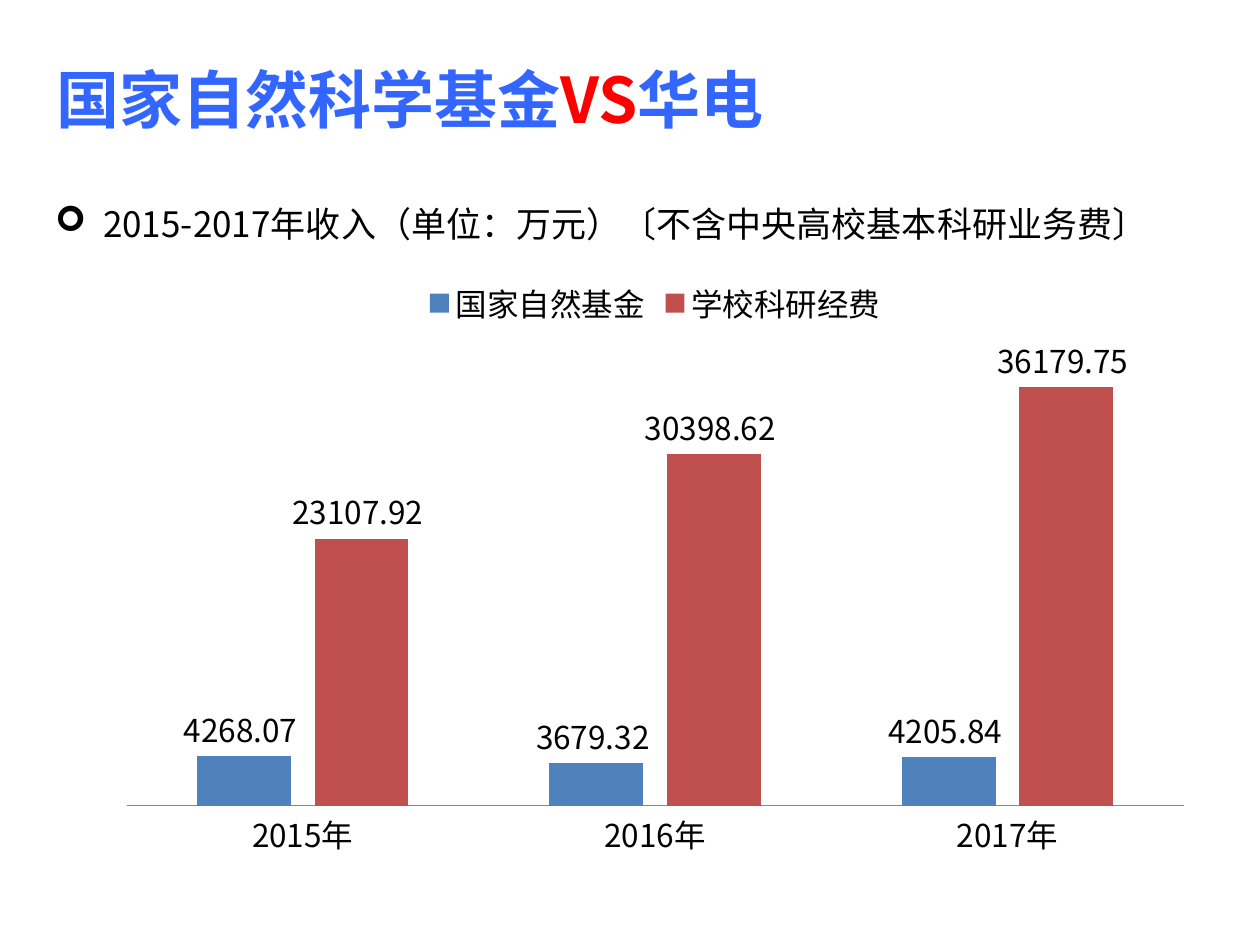
from lxml import etree
from pptx import Presentation
from pptx.chart.data import CategoryChartData
from pptx.dml.color import RGBColor
from pptx.enum.chart import XL_CHART_TYPE as ChartType, XL_LABEL_POSITION as LabelPos
from pptx.enum.chart import XL_LEGEND_POSITION as LegendPos, XL_TICK_MARK as TickMark
from pptx.oxml.ns import qn
from pptx.util import Inches, Pt

FONT = "Noto Sans CJK SC"
NUMBER_FORMAT = "0.00_ "
COLORS = {
    "title": "3366FF",
    "accent": "FF0000",
    "text": "000000",
    "axis": "868686",
    "fund": "4F81BD",
    "school": "C0504D",
}
YEARS = ["2015年", "2016年", "2017年"]
INCOME = [
    ("国家自然基金", "fund", [4268.07, 3679.32, 4205.84]),
    ("学校科研经费", "school", [23107.92, 30398.62, 36179.75]),
]


def rgb(name):
    return RGBColor.from_string(COLORS[name])


def style_font(font, size, color="text", bold=False):
    """Set the format and use the same typeface for Latin and Chinese letters."""
    font.size, font.bold, font.name = Pt(size), bold, FONT
    font.color.rgb = rgb(color)
    latin = font._element.find(qn("a:latin"))
    east_asian = etree.Element(qn("a:ea"), typeface=FONT)
    latin.addnext(east_asian)


def add_run(paragraph, text, **style):
    run = paragraph.add_run()
    run.text = text
    style_font(run.font, **style)


def add_bullet(paragraph, char, indent):
    properties = paragraph._p.get_or_add_pPr()
    properties.set("marL", str(indent))
    properties.set("indent", str(-indent))
    etree.SubElement(properties, qn("a:buFont"), typeface="Wingdings")
    etree.SubElement(properties, qn("a:buChar"), char=char)


def place_plot(chart, **box):
    """Fix the inner plot area; x, y, w and h are shares of the chart."""
    plot_area = chart._chartSpace.chart.plotArea
    for old in plot_area.findall(qn("c:layout")):
        plot_area.remove(old)
    layout = etree.Element(qn("c:layout"))
    manual = etree.SubElement(layout, qn("c:manualLayout"))
    settings = {"layoutTarget": "inner", "xMode": "edge", "yMode": "edge", **box}
    for tag, value in settings.items():
        etree.SubElement(manual, qn(f"c:{tag}"), val=str(value))
    plot_area.insert(0, layout)


class SlideBuilder:
    def __init__(self, slide):
        self.slide = slide

    def text(self, box, runs, line_spacing, bullet=None):
        frame = self.slide.shapes.add_textbox(*map(Inches, box)).text_frame
        frame.word_wrap = True
        paragraph = frame.paragraphs[0]
        paragraph.line_spacing = line_spacing
        if bullet:
            add_bullet(paragraph, bullet, Inches(0.38))
        for words, style in runs:
            add_run(paragraph, words, **style)

    def column_chart(self, box, categories, series_rows):
        data = CategoryChartData(number_format=NUMBER_FORMAT)
        data.categories = categories
        for name, _, values in series_rows:
            data.add_series(name, values)
        chart = self.slide.shapes.add_chart(
            ChartType.COLUMN_CLUSTERED, *map(Inches, box), data).chart
        chart.has_title = False
        style_font(chart.font, 18)
        chart.has_legend = True
        chart.legend.position = LegendPos.TOP
        chart.legend.include_in_layout = False

        value_axis, category_axis = chart.value_axis, chart.category_axis
        value_axis.visible = False
        value_axis.has_major_gridlines = False
        value_axis.minimum_scale, value_axis.maximum_scale = 0, 40000
        category_axis.major_tick_mark = TickMark.NONE
        category_axis.format.line.color.rgb = rgb("axis")

        plot = chart.plots[0]
        plot.vary_by_categories = False
        plot.gap_width, plot.overlap = 150, -25
        for series, (_, color, _) in zip(plot.series, series_rows):
            series.format.fill.solid()
            series.format.fill.fore_color.rgb = rgb(color)
            labels = series.data_labels
            labels.show_value = True
            labels.position = LabelPos.OUTSIDE_END
            labels.number_format = NUMBER_FORMAT
            labels.number_format_is_linked = False
        place_plot(chart, x=0.02, y=0.13, w=0.96, h=0.765)


def main():
    deck = Presentation()
    deck.slide_width, deck.slide_height = Inches(10), Inches(7.5)
    builder = SlideBuilder(deck.slides.add_slide(deck.slide_layouts[6]))

    title = {"size": 36, "color": "title", "bold": True}
    builder.text((0.35, 0.28, 6.46, 0.79), [
        ("国家自然科学基金", title),
        ("VS", {**title, "color": "accent"}),
        ("华电", title),
    ], line_spacing=1.25)
    builder.text((0.34, 1.39, 9.53, 4.96), [
        ("2015-2017年收入（单位：万元）〔不含中央高校基本科研业务费〕", {"size": 20}),
    ], line_spacing=1.5, bullet="➢")
    builder.column_chart((0.83, 2.1, 8.74, 4.8), YEARS, INCOME)
    deck.save("out.pptx")


if __name__ == "__main__":
    main()
